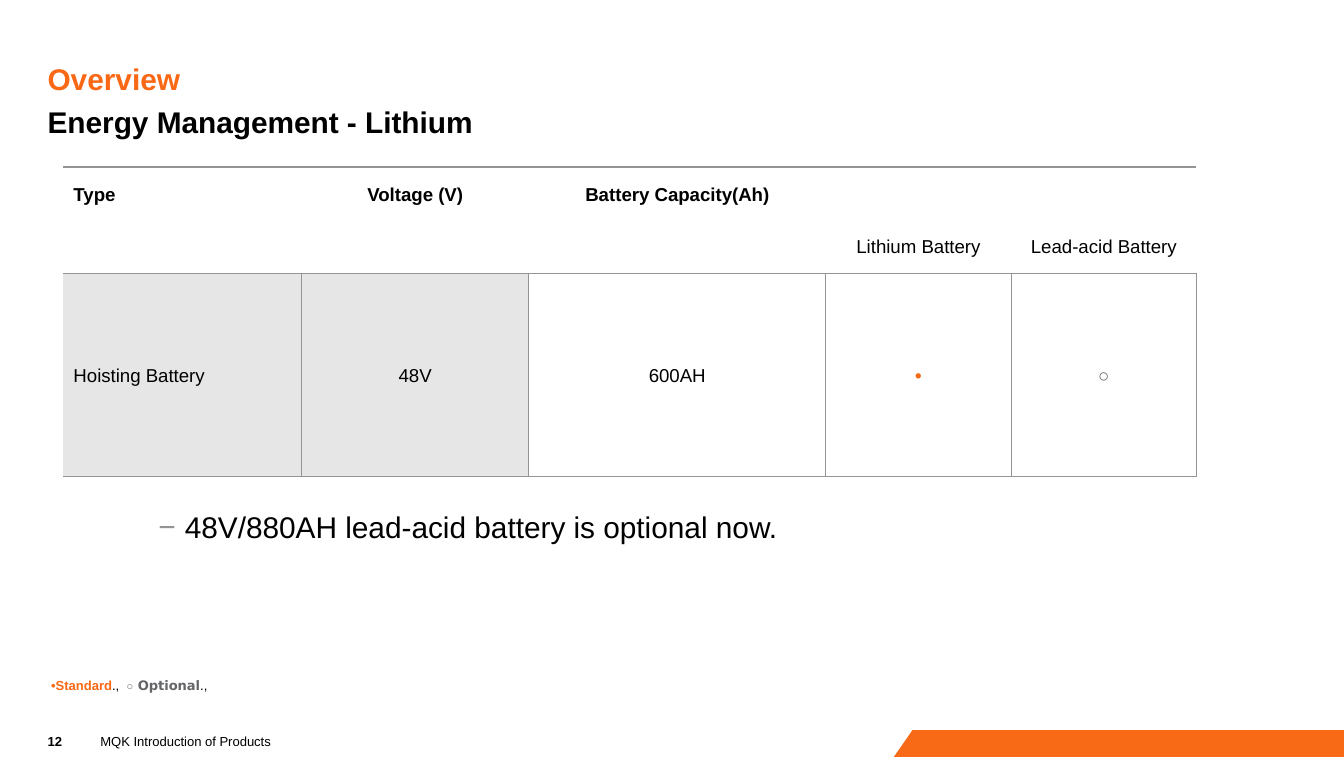
from lxml import etree
from pptx import Presentation
from pptx.dml.color import RGBColor
from pptx.enum import text
from pptx.oxml import ns
from pptx.util import Pt

COLORS = {"accent": "F96915", "band": "F86A16", "black": "000000", "line": "969492",
          "label": "E6E6E6", "white": "FFFFFF", "optional": "646568"}
SLIDE_WIDTH, SLIDE_HEIGHT = 720, 405.36
LEFT = 25.5
HEADER = ["Type", "Voltage (V)", "Battery Capacity(Ah)", "", ""]
SUBHEADER = ["", "", "", "Lithium Battery", "Lead-acid Battery"]
BATTERY = ["Hoisting Battery", "48V", "600AH", "•", "○"]


def rgb(name):
    """Look up a named colour."""
    return RGBColor.from_string(COLORS[name])


def set_all(target, values):
    """Set each attribute in a dict of format values."""
    for name, value in values.items():
        setattr(target, name, value)


def add_run(paragraph, wording, size, color="black", bold=False, face="Arial"):
    """Append one formatted run."""
    run = paragraph.add_run()
    run.text = wording
    set_all(run.font, {"size": Pt(size), "bold": bold, "name": face})
    run.font.color.rgb = rgb(color)


def add_line(slide, box, runs, middle=False):
    """Add a text box without margins and return its paragraph."""
    frame = slide.shapes.add_textbox(*map(Pt, box)).text_frame
    anchor = text.MSO_ANCHOR.MIDDLE if middle else text.MSO_ANCHOR.TOP
    set_all(frame, {"margin_left": 0, "margin_top": 0, "margin_right": 0,
                    "margin_bottom": 0, "word_wrap": True, "vertical_anchor": anchor})
    for run in runs:
        add_run(frame.paragraphs[0], *run)
    return frame.paragraphs[0]


def add_headings(slide, left, top, width):
    """Place the section title and the topic below it."""
    headings = [("Overview", "accent"), ("Energy Management - Lithium", "black")]
    for index, (wording, color) in enumerate(headings):
        add_line(slide, (left, top + index * 23.04, width, 17.28), [(wording, 16, color, True)])


def set_borders(cell, widths):
    """Draw the given cell sides and hide the others."""
    properties = cell._tc.get_or_add_tcPr()
    for side in "LRTB":
        width = widths.get(side, 0)
        line = etree.SubElement(properties, ns.qn(f"a:ln{side}"), w=str(Pt(width)))
        if width:
            fill = etree.SubElement(line, ns.qn("a:solidFill"))
            etree.SubElement(fill, ns.qn("a:srgbClr"), val=COLORS["line"])
        else:
            etree.SubElement(line, ns.qn("a:noFill"))


def borders_for(row, column):
    """Give the border widths of a cell by its place in the table."""
    if row == 0:
        return {"T": 1}
    if row == 1:
        return {"B": 1}
    widths = {"T": 1, "R": 0.5, "B": 1 if column < 2 else 0.75}
    return {**widths, "L": 0.5} if column else widths


def add_battery_table(slide, left, top, width, height):
    """Place the battery table with its two header rows."""
    grid = slide.shapes.add_table(3, 5, *map(Pt, (left, top, width, height))).table
    set_all(grid, {"first_row": False, "horz_banding": False})
    for column, size in zip(grid.columns, (127.8, 121.7, 159.1, 99.3, 99.3)):
        column.width = Pt(size)
    for row, size in zip(grid.rows, (28.8, 28.2, 108.8)):
        row.height = Pt(size)
    symbol_colors = {"•": "accent", "○": "optional"}
    for row, wordings in enumerate((HEADER, SUBHEADER, BATTERY)):
        for column, wording in enumerate(wordings):
            cell = grid.cell(row, column)
            set_borders(cell, borders_for(row, column))
            if row < 2:
                cell.fill.background()
            else:
                cell.fill.solid()
                cell.fill.fore_color.rgb = rgb("label" if column < 2 else "white")
            set_all(cell, {"margin_left": Pt(5.6), "margin_right": Pt(5.6),
                           "margin_top": Pt(1.4 if row == 2 else 0),
                           "margin_bottom": Pt(0.7 if row == 2 else 0),
                           "vertical_anchor": text.MSO_ANCHOR.MIDDLE})
            paragraph = cell.text_frame.paragraphs[0]
            paragraph.alignment = text.PP_ALIGN.CENTER if column else text.PP_ALIGN.LEFT
            if row == 0:
                paragraph.line_spacing = Pt(12)
            if wording:
                bold = row == 0 or wording in symbol_colors
                add_run(paragraph, wording, 10, symbol_colors.get(wording, "black"), bold)
            else:
                paragraph.font.size = Pt(10)
    grid.cell(0, 3).merge(grid.cell(0, 4))


def add_note(slide, left, top, width, height):
    """Place the dashed remark under the table."""
    remark = add_line(slide, (left, top, width, height),
                      [("48V/880AH lead-acid battery is optional now.", 16)])
    set_all(remark, {"line_spacing": 1.1, "space_after": Pt(4)})
    properties = remark._p.get_or_add_pPr()
    properties.set("marL", str(Pt(14.2)))
    properties.set("indent", str(-Pt(14.2)))
    bullet_color = etree.SubElement(properties, ns.qn("a:buClr"))
    etree.SubElement(bullet_color, ns.qn("a:srgbClr"), val=COLORS["line"])
    etree.SubElement(properties, ns.qn("a:buFont"), typeface="Arial")
    etree.SubElement(properties, ns.qn("a:buChar"), char="−")


def add_legend(slide, left, top, width, height):
    """Place the key to the table symbols."""
    add_line(slide, (left, top, width, height), [
        (" ", 7), ("•Standard", 7, "accent", True), (".,  ", 7),
        ("○", 6, "optional", True), (" Optional", 7, "optional", True, "DejaVu Sans"),
        (".,", 7)], middle=True)


def add_footer(slide, left, top, width, height):
    """Place the page number, document name and slanted band."""
    outline = slide.shapes.build_freeform(Pt(left + width), Pt(top), scale=1.0)
    outline.add_line_segments([(Pt(left + x), Pt(top + y)) for x, y in
                               ((463.3, 0), (453.3, height), (width, height))])
    band = outline.convert_to_shape()
    band.shadow.inherit = False
    band.fill.solid()
    band.fill.fore_color.rgb = rgb("band")
    band.line.fill.background()
    add_line(slide, (left, top + 1.8, 22.3, 8.64), [("12", 7, "black", True)], middle=True)
    add_line(slide, (left + 28.3, top + 1.8, 414, 8.64),
             [("MQK Introduction of Products", 7)], middle=True)


def main():
    """Build the slide and save it."""
    deck = Presentation()
    set_all(deck, {"slide_width": Pt(SLIDE_WIDTH), "slide_height": Pt(SLIDE_HEIGHT)})
    slide = deck.slides.add_slide(deck.slide_layouts[6])
    add_footer(slide, LEFT, 391, SLIDE_WIDTH - LEFT, SLIDE_HEIGHT - 391)
    add_headings(slide, LEFT, 32.4, 538.6)
    add_battery_table(slide, 33.8, 89.4, 607.2, 165.8)
    add_legend(slide, LEFT, 361.4, 301, 11.5)
    add_note(slide, 84.8, 270.7, 455, 72)
    deck.save("out.pptx")


if __name__ == "__main__":
    main()
